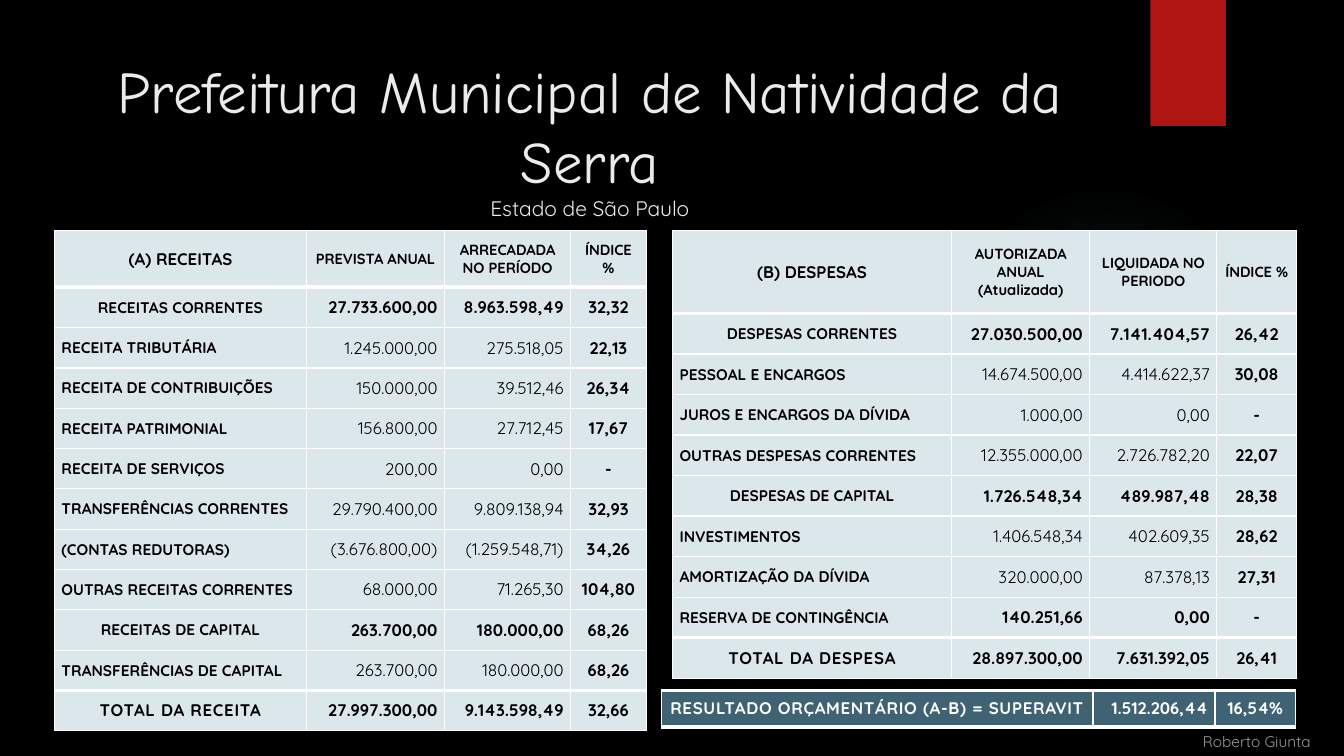
from lxml import etree
from pptx import Presentation
from pptx.dml.color import RGBColor
from pptx.enum.shapes import MSO_SHAPE as Shape
from pptx.enum.text import MSO_ANCHOR as Anchor, MSO_AUTO_SIZE as AutoSize, PP_ALIGN as Align
from pptx.oxml import parse_xml
from pptx.oxml.ns import nsdecls, qn
from pptx.util import Inches, Pt

COLORS = {"background": "000000", "ribbon": "B01513", "glow": "50B9C1", "title": "EBEBEB",
          "white": "FFFFFF", "black": "000000", "cell": "DCE7EC", "result": "3F6373"}

HEADER, GROUP, ITEM, RESERVE, TOTAL, RESULT = "header", "group", "item", "reserve", "total", "result"

REVENUES = [
    (HEADER, "(A) RECEITAS", "PREVISTA ANUAL", "ARRECADADA NO PERÍODO", "ÍNDICE %"),
    (GROUP, "RECEITAS CORRENTES", "27.733.600,00", "8.963.598,49", "32,32"),
    (ITEM, "RECEITA TRIBUTÁRIA", "1.245.000,00", "275.518,05", "22,13"),
    (ITEM, "RECEITA DE CONTRIBUIÇÕES", "150.000,00", "39.512,46", "26,34"),
    (ITEM, "RECEITA PATRIMONIAL", "156.800,00", "27.712,45", "17,67"),
    (ITEM, "RECEITA DE SERVIÇOS", "200,00", "0,00", "-"),
    (ITEM, "TRANSFERÊNCIAS CORRENTES", "29.790.400,00", "9.809.138,94", "32,93"),
    (ITEM, "(CONTAS REDUTORAS)", "(3.676.800,00)", "(1.259.548,71)", "34,26"),
    (ITEM, "OUTRAS RECEITAS CORRENTES", "68.000,00", "71.265,30", "104,80"),
    (GROUP, "RECEITAS DE CAPITAL", "263.700,00", "180.000,00", "68,26"),
    (ITEM, "TRANSFERÊNCIAS DE CAPITAL", "263.700,00", "180.000,00", "68,26"),
    (TOTAL, "TOTAL DA RECEITA", "27.997.300,00", "9.143.598,49", "32,66"),
]
EXPENSES = [
    (HEADER, "(B) DESPESAS", "AUTORIZADA\nANUAL (Atualizada)", "LIQUIDADA NO PERIODO", "ÍNDICE %"),
    (GROUP, "DESPESAS CORRENTES", "27.030.500,00", "7.141.404,57", "26,42"),
    (ITEM, "PESSOAL E ENCARGOS", "14.674.500,00", "4.414.622,37", "30,08"),
    (ITEM, "JUROS E ENCARGOS DA DÍVIDA", "1.000,00", "0,00", "-"),
    (ITEM, "OUTRAS DESPESAS CORRENTES", "12.355.000,00", "2.726.782,20", "22,07"),
    (GROUP, "DESPESAS DE CAPITAL", "1.726.548,34", "489.987,48", "28,38"),
    (ITEM, "INVESTIMENTOS", "1.406.548,34", "402.609,35", "28,62"),
    (ITEM, "AMORTIZAÇÃO DA DÍVIDA", "320.000,00", "87.378,13", "27,31"),
    (RESERVE, "RESERVA DE CONTINGÊNCIA", "140.251,66", "0,00", "-"),
    (TOTAL, "TOTAL DA DESPESA", "28.897.300,00", "7.631.392,05", "26,41"),
]
OUTCOME = [(RESULT, "RESULTADO ORÇAMENTÁRIO (A-B) = SUPERAVIT", "1.512.206,44", "16,54%")]


class BudgetSlide:
    """Holds the style and the slide, and draws each kind of element."""

    def __init__(self, presentation):
        self.font = "Quicksand"
        self.slide = presentation.slides.add_slide(presentation.slide_layouts[5])
        fill = self.slide.background.fill
        fill.solid()
        fill.fore_color.rgb = RGBColor.from_string(COLORS["background"])

    def format_text(self, paragraph, align, color, spacing=0, **formats):
        """Aligns a paragraph and formats its runs."""
        paragraph.alignment = align
        for run in paragraph.runs:
            for name, value in {"name": self.font, "bold": False, **formats}.items():
                setattr(run.font, name, value)
            run.font.color.rgb = RGBColor.from_string(COLORS[color])
            if spacing:
                run._r.get_or_add_rPr().set("spc", str(spacing))

    def place(self, shape, left, top, width, height):
        """Moves and sizes a shape, in inches."""
        for name, value in {"left": left, "top": top, "width": width, "height": height}.items():
            setattr(shape, name, Inches(value))

    def preset(self, kind, color, *box):
        """Adds a plain filled shape."""
        shape = self.slide.shapes.add_shape(kind, *map(Inches, box))
        shape.shadow.inherit = False
        shape.line.fill.background()
        shape.fill.solid()
        shape.fill.fore_color.rgb = RGBColor.from_string(COLORS[color])
        return shape

    def glow(self, color, *box):
        """Adds a circle that fades out from its centre."""
        shape = self.preset(Shape.OVAL, color, *box)
        stops = "".join(
            f'<a:gs pos="{position * 1000}"><a:srgbClr val="{COLORS[color]}">'
            f'<a:alpha val="{alpha * 1000}"/></a:srgbClr></a:gs>'
            for position, alpha in ((0, 7), (36, 6), (69, 0)))
        gradient = parse_xml(
            f'<a:gradFill {nsdecls("a")}><a:gsLst>{stops}</a:gsLst><a:path path="circle">'
            '<a:fillToRect l="50000" t="50000" r="50000" b="50000"/></a:path></a:gradFill>')
        properties = shape._element.spPr
        properties.replace(properties.find(qn("a:solidFill")), gradient)

    def title(self, text, subtitle, *box):
        """Fills the title placeholder with a title and a smaller second line."""
        shape = self.slide.shapes.title
        self.place(shape, *box)
        frame = shape.text_frame
        frame.text = f"{text}\n{subtitle}"
        for name, value in {"auto_size": AutoSize.NONE, "word_wrap": True,
                            "vertical_anchor": Anchor.TOP}.items():
            setattr(frame, name, value)
        first, second = frame.paragraphs
        self.format_text(first, Align.CENTER, "title", name="Comic Neue", size=Pt(42))
        self.format_text(second, Align.CENTER, "title", size=Pt(15))

    def footer(self, text, *box):
        """Adds a translucent line of text, aligned right."""
        frame = self.slide.shapes.add_textbox(*map(Inches, box)).text_frame
        frame.word_wrap = True
        frame.vertical_anchor = Anchor.BOTTOM
        frame.text = text
        paragraph = frame.paragraphs[0]
        self.format_text(paragraph, Align.RIGHT, "white", size=Pt(11))
        color = next(paragraph._p.iter(qn("a:srgbClr")))
        etree.SubElement(color, qn("a:alpha")).set("val", "60000")

    def borders(self, cell, top, bottom):
        """Draws white borders, with the top and bottom widths in points."""
        properties = cell._tc.get_or_add_tcPr()
        for side, width in (("L", 1), ("R", 1), ("T", top), ("B", bottom)):
            properties.append(parse_xml(
                f'<a:ln{side} {nsdecls("a")} w="{Pt(width)}"><a:solidFill>'
                f'<a:srgbClr val="{COLORS["white"]}"/></a:solidFill></a:ln{side}>'))

    def cell(self, cell, text, kind, column, last_column):
        """Writes one cell according to the kind of its row and its column."""
        label, index = column == 0, column == last_column
        cell.fill.solid()
        cell.fill.fore_color.rgb = RGBColor.from_string(COLORS["result" if kind == RESULT else "cell"])
        side = Inches(0.08 if kind == HEADER else 0.07)
        for name, value in {"margin_left": side, "margin_right": side, "margin_top": 0,
                            "margin_bottom": 0, "vertical_anchor": Anchor.MIDDLE}.items():
            setattr(cell, name, value)
        align, size = Align.RIGHT, 12
        if index or kind == HEADER:
            align = Align.CENTER
        elif label:
            align = Align.LEFT if kind in (ITEM, RESERVE) else Align.CENTER
        if kind == HEADER and not label:
            size = 10.5
        elif label and kind in (GROUP, ITEM, RESERVE):
            size = 11
        cell.text_frame.text = text
        for paragraph in cell.text_frame.paragraphs:
            self.format_text(paragraph, align, "white" if kind == RESULT else "black",
                             spacing=50 if label and kind in (TOTAL, RESULT) else 0,
                             size=Pt(size), bold=label or index or kind != ITEM)

    def table(self, rows, left, top, widths, height, first_height):
        """Adds a table whose rows after the first share the remaining height."""
        frame = self.slide.shapes.add_table(len(rows), len(widths), *map(
            Inches, (left, top, sum(widths), height)))
        table = frame.table
        table.first_row = table.horz_banding = False
        for column, width in zip(table.columns, widths):
            column.width = Inches(width)
        for number, (kind, *texts) in enumerate(rows):
            shared = (height - first_height) / max(len(rows) - 1, 1)
            table.rows[number].height = Inches(shared if number else first_height)
            following = rows[number + 1][0] if number + 1 < len(rows) else None
            above = 3 if number == 1 or kind in (TOTAL, RESULT) else 1
            below = 3 if kind in (HEADER, RESULT) or following == TOTAL else 1
            for column, text in enumerate(texts):
                cell = table.cell(number, column)
                self.borders(cell, above, below)
                self.cell(cell, text, kind, column, len(texts) - 1)


def main():
    """Builds the budget slide and saves it."""
    presentation = Presentation()
    presentation.slide_width, presentation.slide_height = Inches(13.33), Inches(7.5)
    budget = BudgetSlide(presentation)
    budget.glow("glow", 9.41, 1.83, 3.08, 3.08)
    budget.preset(Shape.RECTANGLE, "ribbon", 11.41, 0, 0.75, 1.25)
    budget.table(REVENUES, 0.54, 2.29, (2.5, 1.37, 1.25, 0.75), 4.96, 0.56)
    budget.table(EXPENSES, 6.67, 2.29, (2.77, 1.37, 1.26, 0.79), 4.44, 0.82)
    budget.table(OUTCOME, 6.56, 6.85, (4.28, 1.21, 0.8), 0.36, 0.36)
    budget.footer("Roberto Giunta", 8.88, 7.17, 4.22, 0.33)
    budget.title("Prefeitura Municipal de Natividade da Serra", "Estado de São Paulo",
                 0.71, 0.49, 10.28, 1.53)
    presentation.save("out.pptx")


if __name__ == "__main__":
    main()
